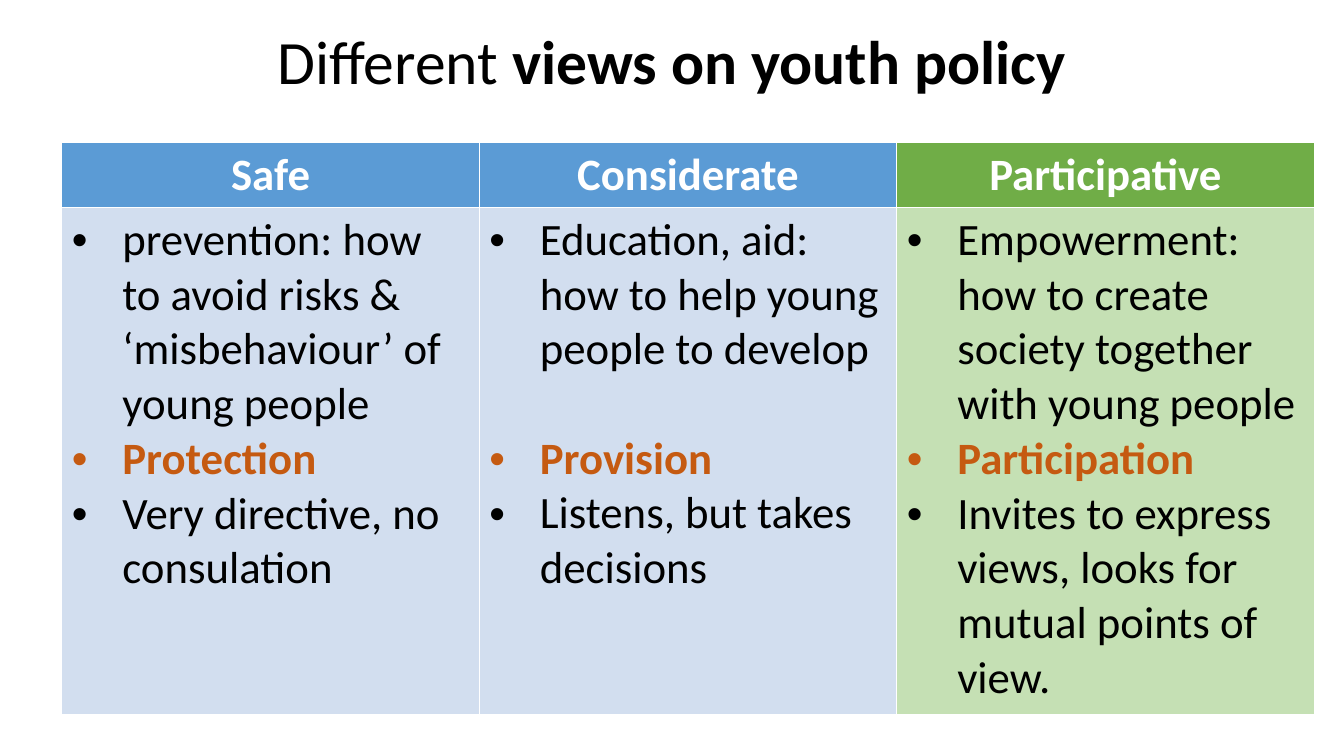
import pptx
import pptx.dml.color
import pptx.enum.text
import pptx.oxml.ns
import pptx.util
from lxml import etree

Cm = pptx.util.Cm
Pt = pptx.util.Pt
CENTER = pptx.enum.text.PP_ALIGN.CENTER
BLACK, WHITE, ORANGE = "000000", "FFFFFF", "C55A11"


def style_font(font, size, color, bold):
    font.name = "Calibri"
    font.size = Pt(size)
    font.bold = bold
    font.color.rgb = pptx.dml.color.RGBColor.from_string(color)


def add_bullet(paragraph):
    properties = paragraph._p.get_or_add_pPr()
    properties.set("marL", str(Cm(1.27)))
    properties.set("indent", str(-Cm(1.27)))
    bullet_font = etree.SubElement(properties, pptx.oxml.ns.qn("a:buFont"))
    bullet_font.set("typeface", "Arial")
    bullet = etree.SubElement(properties, pptx.oxml.ns.qn("a:buChar"))
    bullet.set("char", "•")


# Heading, fill colours, space after the first point, and the three points
views = [
    ("Safe", "5B9BD5", "D2DEEF", 0,
     ["prevention: how to avoid risks & ‘misbehaviour’ of young people",
      "Protection",
      "Very directive, no consulation"]),
    ("Considerate", "5B9BD5", "D2DEEF", 39,
     ["Education, aid: how to help young people to develop",
      "Provision",
      "Listens, but takes decisions"]),
    ("Participative", "70AD47", "C5E0B4", 0,
     ["Empowerment: how to create society together with young people",
      "Participation",
      "Invites to express views, looks for mutual points of view."]),
]

presentation = pptx.Presentation()
presentation.slide_width = Cm(33.87)
presentation.slide_height = Cm(19.05)
slide = presentation.slides.add_slide(presentation.slide_layouts[5])

# Title
title = slide.shapes.title
title.left, title.top, title.width, title.height = Cm(2.33), Cm(0.53), Cm(29.21), Cm(2.2)
title.text_frame.vertical_anchor = pptx.enum.text.MSO_ANCHOR.MIDDLE
paragraph = title.text_frame.paragraphs[0]
paragraph.alignment = CENTER
paragraph.line_spacing = 0.9
for text, bold in [("Different ", False), ("views on youth policy", True)]:
    run = paragraph.add_run()
    run.text = text
    style_font(run.font, 44, BLACK, bold)

# Table: one column per view; its built-in style gives the white rules
table = slide.shapes.add_table(2, len(views), Cm(1.56), Cm(3.59), Cm(31.56), Cm(14.42)).table
table.horz_banding = False
table.rows[0].height = Cm(1.64)
table.rows[1].height = Cm(12.78)

for column, (heading, header_fill, body_fill, gap, points) in enumerate(views):
    header, body = table.cell(0, column), table.cell(1, column)
    for cell, color in [(header, header_fill), (body, body_fill)]:
        cell.fill.solid()
        cell.fill.fore_color.rgb = pptx.dml.color.RGBColor.from_string(color)

    header.text = heading
    paragraph = header.text_frame.paragraphs[0]
    paragraph.alignment = CENTER
    style_font(paragraph.font, 32, WHITE, True)

    # The middle point is the key word
    body.text = "\n".join(points)
    paragraphs = body.text_frame.paragraphs
    paragraphs[0].space_after = Pt(gap)
    for index, paragraph in enumerate(paragraphs):
        is_key = index == 1
        add_bullet(paragraph)
        style_font(paragraph.font, 32, ORANGE if is_key else BLACK, is_key)

presentation.save("out.pptx")
